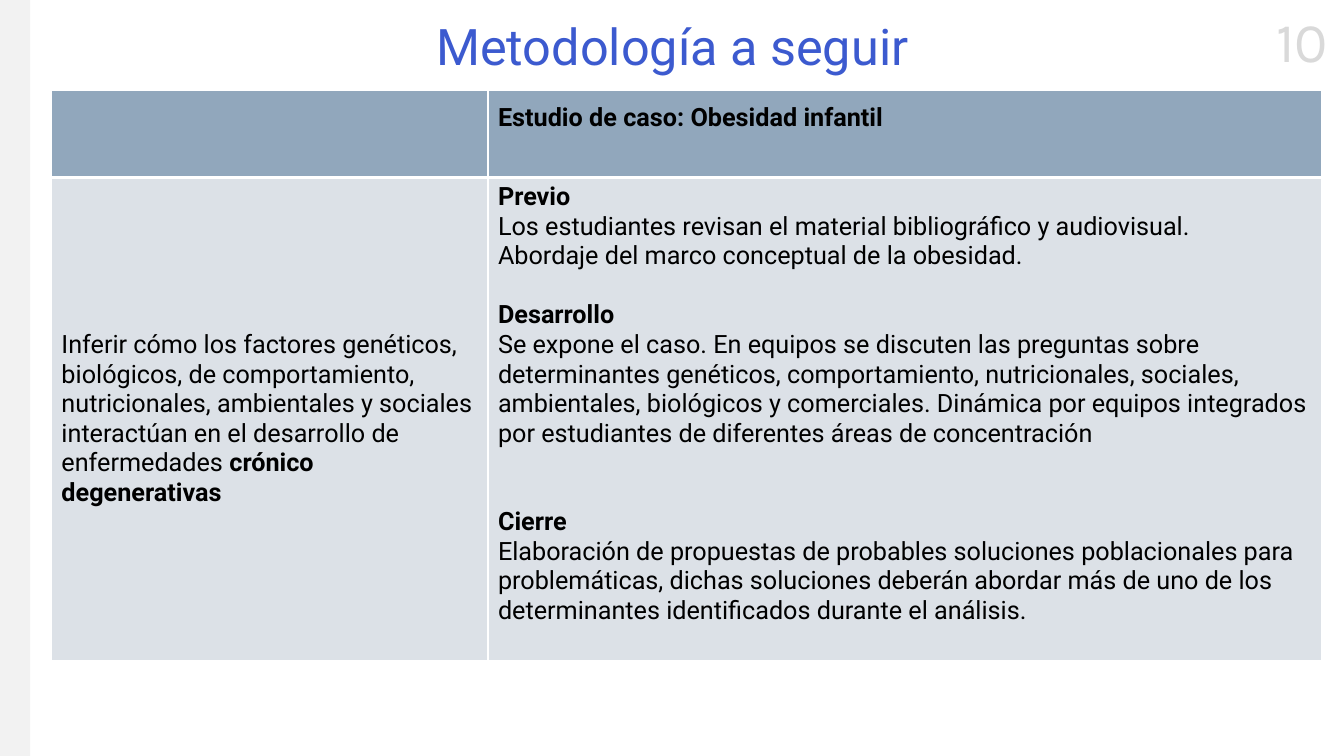
"""Build the methodology slide with its case study table."""
from dataclasses import dataclass

from lxml.etree import SubElement
from pptx import Presentation
from pptx.dml.color import RGBColor
from pptx.enum.shapes import MSO_SHAPE
from pptx.enum.text import MSO_ANCHOR, PP_ALIGN
from pptx.oxml.ns import qn
from pptx.table import _Cell
from pptx.text.text import _Paragraph
from pptx.util import Inches, Pt

BLUE = RGBColor(0x3C, 0x5A, 0xCF)
HEADER_FILL = RGBColor(0x91, 0xA7, 0xBC)
BODY_FILL = RGBColor(0xDC, 0xE1, 0xE7)
BAND_FILL = RGBColor(0xF2, 0xF2, 0xF2)
NUMBER_GRAY = RGBColor(0xD9, 0xD9, 0xD9)
BLACK = RGBColor(0, 0, 0)
WHITE = RGBColor(0xFF, 0xFF, 0xFF)


@dataclass(frozen=True)
class Stage:
    heading: str
    lines: tuple[str, ...]
    space_before: float = 0


STAGES = (
    Stage("Previo", (
        "Los estudiantes revisan el material bibliográfico y audiovisual.",
        "Abordaje del marco conceptual de la obesidad.",
    )),
    Stage("Desarrollo", (
        "Se expone el caso. En equipos se discuten las preguntas sobre determinantes "
        "genéticos, comportamiento, nutricionales, sociales, ambientales, biológicos y "
        "comerciales. Dinámica por equipos integrados por estudiantes de diferentes "
        "áreas de concentración",
    ), 21),
    Stage("Cierre", (
        "Elaboración de propuestas de probables soluciones poblacionales para "
        "problemáticas, dichas soluciones deberán abordar más de uno de los "
        "determinantes identificados durante el análisis.",
    ), 42),
)


def style(para: _Paragraph, size: float, color: RGBColor, name: str = "Roboto",
          bold: bool | None = None) -> None:
    font = para.font
    font.name, font.size, font.bold = name, Pt(size), bold
    font.color.rgb = color


def add_border(cell: _Cell, side: str, width: float, position: int) -> None:
    properties = cell._tc.get_or_add_tcPr()
    line = SubElement(properties, qn(f"a:{side}"), w=str(Pt(width)))
    fill = SubElement(line, qn("a:solidFill"))
    SubElement(fill, qn("a:srgbClr"), val=str(WHITE))
    properties.insert(position, line)


def format_cell(cell: _Cell, header: bool) -> None:
    cell.fill.solid()
    cell.fill.fore_color.rgb = HEADER_FILL if header else BODY_FILL
    thick_side = "lnB" if header else "lnT"
    for position, side in enumerate(("lnL", "lnR", "lnT", "lnB")):
        add_border(cell, side, 3 if side == thick_side else 1, position)


def write_stages(cell: _Cell, stages: tuple[Stage, ...]) -> None:
    frame = cell.text_frame
    for stage in stages:
        first = stage is stages[0]
        para = frame.paragraphs[0] if first else frame.add_paragraph()
        para.text = stage.heading
        para.space_before = Pt(stage.space_before)
        style(para, 18, BLACK, bold=True)
        for line in stage.lines:
            para = frame.add_paragraph()
            para.text = line
            style(para, 18, BLACK)


def main() -> None:
    deck = Presentation()
    deck.slide_width, deck.slide_height = Inches(13.33), Inches(7.5)
    page = deck.slides.add_slide(deck.slide_layouts[5])

    band = page.shapes.add_shape(MSO_SHAPE.RECTANGLE, 0, 0, Inches(0.3), deck.slide_height)
    band.shadow.inherit = False
    band.fill.solid()
    band.fill.fore_color.rgb = BAND_FILL
    band.line.fill.background()

    number = page.shapes.add_textbox(Inches(12.54), Inches(0.02), Inches(0.75), Inches(0.77))
    number.text_frame.word_wrap = False
    para = number.text_frame.paragraphs[0]
    para.text = "10"
    para.alignment = PP_ALIGN.CENTER
    style(para, 40, NUMBER_GRAY, "Karla")

    title = page.shapes.title
    title.left, title.top = Inches(0.92), Inches(0.07)
    title.width, title.height = Inches(11.5), Inches(0.84)
    title.text_frame.vertical_anchor = MSO_ANCHOR.MIDDLE
    para = title.text_frame.paragraphs[0]
    para.text = "Metodología a seguir"
    para.alignment = PP_ALIGN.CENTER
    para.line_spacing = 0.9
    style(para, 36, BLUE)

    table = page.shapes.add_table(2, 2, Inches(0.51), Inches(0.9),
                                  Inches(12.6), Inches(5.65)).table
    table.first_row = table.horz_banding = False
    for column, width in zip(table.columns, (4.33, 8.27)):
        column.width = Inches(width)
    for index, (row, height) in enumerate(zip(table.rows, (0.86, 4.79))):
        row.height = Inches(height)
        for cell in row.cells:
            format_cell(cell, header=index == 0)

    case = table.cell(0, 1)
    case.margin_top = Inches(0.12)
    para = case.text_frame.paragraphs[0]
    para.text = "Estudio de caso: Obesidad infantil"
    style(para, 18, BLACK, bold=True)

    goal = table.cell(1, 0)
    goal.vertical_anchor = MSO_ANCHOR.MIDDLE
    para = goal.text_frame.paragraphs[0]
    para.text = ("Inferir cómo los factores genéticos, biológicos, de comportamiento, "
                 "nutricionales, ambientales y sociales interactúan en el desarrollo "
                 "de enfermedades ")
    span = para.add_run()
    span.text = "crónico degenerativas"
    span.font.bold = True
    style(para, 18, BLACK)

    write_stages(table.cell(1, 1), STAGES)
    deck.save("out.pptx")


if __name__ == "__main__":
    main()
